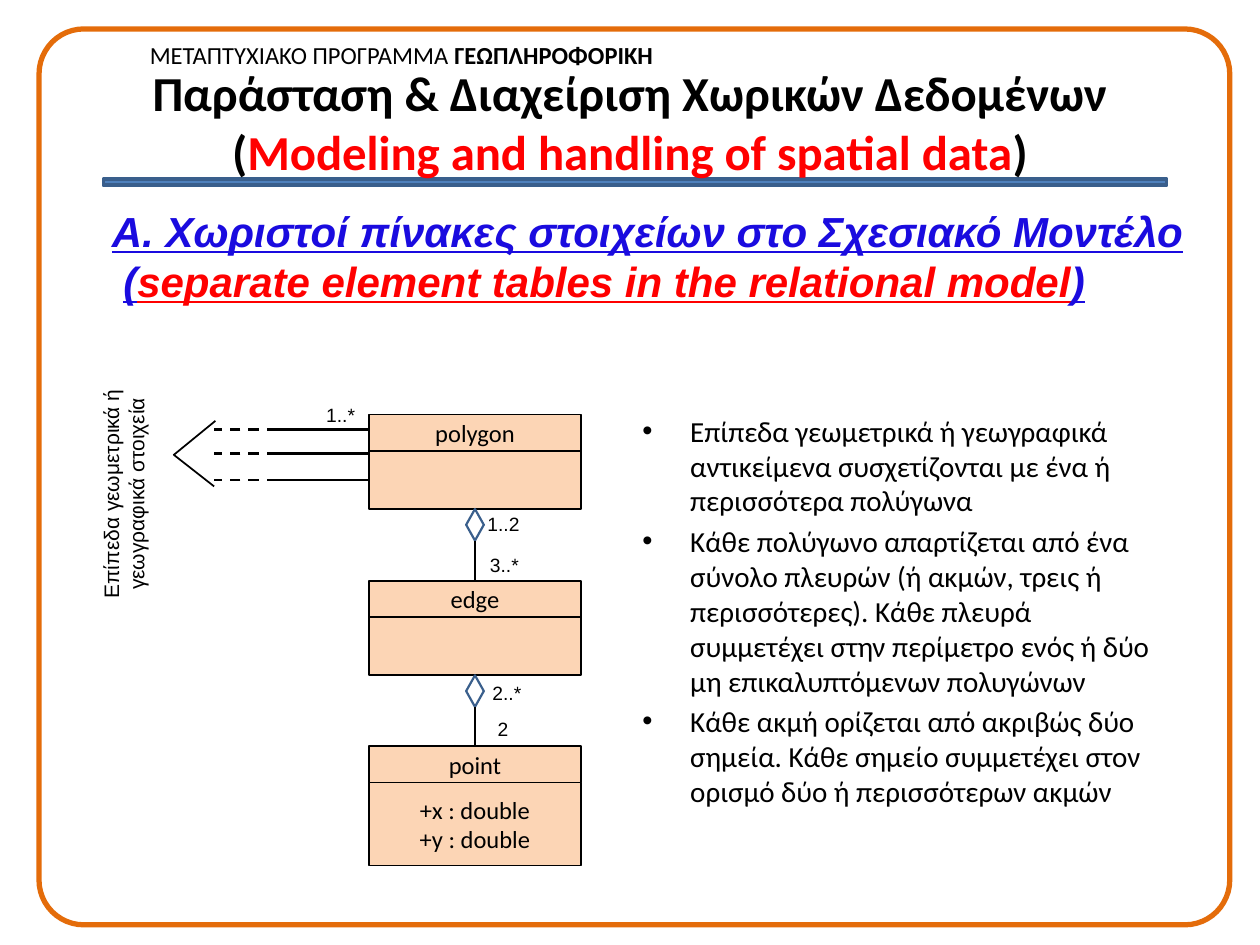
from dataclasses import dataclass

from lxml.etree import SubElement
from pptx import Presentation
from pptx.dml.color import RGBColor
from pptx.enum.dml import MSO_LINE
from pptx.enum.shapes import MSO_CONNECTOR, MSO_SHAPE
from pptx.enum.text import MSO_ANCHOR, MSO_AUTO_SIZE, PP_ALIGN
from pptx.oxml.ns import qn
from pptx.util import Emu, Pt

PX = 9144


@dataclass(frozen=True)
class Theme:
    """Colours, fonts and type sizes of the slide."""
    ink: str = "000000"
    red: str = "FF0000"
    heading_blue: str = "1A0BDF"
    rule_blue: str = "4F81BD"
    outline_blue: str = "3A5F8C"
    frame_orange: str = "E46C0A"
    class_peach: str = "FCD5B5"
    body_font: str = "Calibri"
    label_font: str = "Arial"
    title_size: float = 27.9
    heading_size: float = 24
    bullet_size: float = 16.6
    class_size: float = 14
    side_size: float = 12
    label_size: float = 11


THEME = Theme()


def px(length):
    """Turn whole pixels into EMU."""
    return Emu(length * PX)


def rgb(color):
    """Turn a hex string into a colour."""
    return RGBColor.from_string(color)


def set_line(line, color, width, dash=None):
    """Format an outline or a connector line."""
    line.color.rgb = rgb(color)
    line.width = Pt(width)
    if dash:
        line.dash_style = dash


def style_shape(shape, fill, color, width):
    """Give a shape its fill and outline without a shadow."""
    shape.shadow.inherit = False
    if fill:
        shape.fill.solid()
        shape.fill.fore_color.rgb = rgb(fill)
    else:
        shape.fill.background()
    set_line(shape.line, color, width)


def add_block(slide, kind, box, fill=None, color=THEME.ink, width=1):
    """Add a preset shape."""
    block = slide.shapes.add_shape(kind, *map(px, box))
    style_shape(block, fill, color, width)
    return block


def add_line(slide, start, end, width, dash=None):
    """Add a straight connector."""
    line = slide.shapes.add_connector(MSO_CONNECTOR.STRAIGHT, *map(px, start + end))
    set_line(line.line, THEME.ink, width, dash)
    SubElement(line._element.spPr, qn("a:effectLst"))
    return line


def set_bullet(paragraph, indent):
    """Give a paragraph a hanging bullet."""
    properties = paragraph._p.get_or_add_pPr()
    properties.set("marL", str(px(indent)))
    properties.set("indent", str(-px(indent)))
    SubElement(properties, qn("a:buFont"), typeface="Arial")
    SubElement(properties, qn("a:buChar"), char="•")


def write(shape, paragraphs, size, font=THEME.body_font, color=THEME.ink, bold=False,
          italic=False, underline=False, align=PP_ALIGN.LEFT, anchor=MSO_ANCHOR.TOP,
          wrap=True, bullet=0, gap=0, last_indent=0):
    """Write paragraphs, each a list of (text, format changes) runs."""
    frame = shape.text_frame
    frame.word_wrap = wrap
    frame.vertical_anchor = anchor
    if not wrap:
        frame.auto_size = MSO_AUTO_SIZE.SHAPE_TO_FIT_TEXT
    for index, runs in enumerate(paragraphs):
        paragraph = frame.add_paragraph() if index else frame.paragraphs[0]
        paragraph.alignment = align
        if index and gap:
            paragraph.space_before = Pt(gap)
        if bullet:
            set_bullet(paragraph, bullet)
        for text, changes in runs:
            if text == "\n":
                paragraph.add_line_break()
                continue
            run = paragraph.add_run()
            run.text = text
            run.font.name = font
            run.font.size = Pt(size)
            run.font.bold = changes.get("bold", bold)
            run.font.italic = italic
            run.font.underline = underline
            run.font.color.rgb = rgb(changes.get("color", color))
    if last_indent:
        paragraph._p.get_or_add_pPr().set("marL", str(px(last_indent)))


def add_text(slide, box, paragraphs, **style):
    """Add a text box."""
    text_box = slide.shapes.add_textbox(*map(px, box))
    write(text_box, paragraphs, **style)
    return text_box


def add_class(slide, name, top, body_height, attributes=()):
    """Add a class box and return its header and body."""
    left, width, header_height = 293, 168, 29
    style = dict(size=THEME.class_size, align=PP_ALIGN.CENTER, anchor=MSO_ANCHOR.MIDDLE)
    header = add_block(slide, MSO_SHAPE.RECTANGLE, (left, top, width, header_height),
                       THEME.class_peach)
    write(header, [[(name, {})]], **style)
    body = add_block(slide, MSO_SHAPE.RECTANGLE,
                     (left, top + header_height, width, body_height), THEME.class_peach)
    if attributes:
        write(body, [[(attribute, {})] for attribute in attributes], **style)
    return header, body


def add_aggregation(slide, whole_bottom, part_header):
    """Join a whole to its part by a diamond and a line."""
    center, width, height = 377, 14, 25
    diamond = add_block(slide, MSO_SHAPE.FLOWCHART_DECISION,
                        (center - width // 2, whole_bottom, width, height),
                        color=THEME.outline_blue, width=1.25)
    end = (center, whole_bottom + height)
    link = add_line(slide, end, end, 1.25)
    link.begin_connect(diamond, 2)
    link.end_connect(part_header, 0)


def add_incoming(slide, polygon_body):
    """Draw the links from the geographic elements to the polygon."""
    for y in (341, 360, 381):
        solid = add_line(slide, (293, y), (220, y), 1.5)
        add_line(slide, (220, y), (170, y), 1.5, MSO_LINE.DASH)
    solid.begin_connect(polygon_body, 1)
    builder = slide.shapes.build_freeform(171, 334, scale=PX)
    builder.add_line_segments([(138, 361), (170, 386)], close=False)
    style_shape(builder.convert_to_shape(), None, THEME.ink, 1)


def add_diagram(slide):
    """Draw the class diagram with its multiplicities."""
    _, polygon_body = add_class(slide, "polygon", 329, 46)
    edge_header, _ = add_class(slide, "edge", 461, 46)
    point_header, _ = add_class(slide, "point", 592, 66, ("+x : double", "+y : double"))
    add_incoming(slide, polygon_body)
    add_aggregation(slide, 404, edge_header)
    add_aggregation(slide, 536, point_header)
    for multiplicity, left, top in (("1..*", 249, 315), ("1..2", 377, 402),
                                    ("3..*", 379, 434), ("2..*", 381, 536), ("2", 385, 564)):
        add_text(slide, (left, top, 58, 29), [[(multiplicity, {})]],
                 size=THEME.label_size, font=THEME.label_font)
    source = add_text(slide, (-1, 367, 198, 50),
                      [[("Επίπεδα γεωμετρικά ή γεωγραφικά στοιχεία", {})]],
                      size=THEME.side_size, font=THEME.label_font, align=PP_ALIGN.CENTER)
    source.rotation = 270


def add_header(slide):
    """Add the frame, programme name, title and heading."""
    add_text(slide, (109, 27, 428, 34),
             [[("ΜΕΤΑΠΤΥΧΙΑΚΟ ΠΡΟΓΡΑΜΜΑ ", {}), ("ΓΕΩΠΛΗΡΟΦΟΡΙΚΗ", {"bold": True})]],
             size=THEME.class_size, wrap=False)
    add_block(slide, MSO_SHAPE.RECTANGLE, (82, 142, 844, 5), THEME.rule_blue,
              THEME.outline_blue, 2)
    border = add_block(slide, MSO_SHAPE.ROUNDED_RECTANGLE, (31, 23, 945, 711),
                       color=THEME.frame_orange, width=3)
    border.adjustments[0] = 0.05
    red = {"color": THEME.red}
    add_text(slide, (50, 45, 900, 103),
             [[("Παράσταση & Διαχείριση Χωρικών Δεδομένων", {}), ("\n", {}), ("(", {}),
               ("Modeling and handling of spatial data", red), (")", {})]],
             size=THEME.title_size, bold=True, align=PP_ALIGN.CENTER, anchor=MSO_ANCHOR.MIDDLE)
    add_text(slide, (79, 158, 877, 91),
             [[("Α. Xωριστοί πίνακες στοιχείων στο Σχεσιακό Μοντέλο", {})],
              [("(", {}), ("separate element tables in the relational model", red), (")", {})]],
             size=THEME.heading_size, font=THEME.label_font, color=THEME.heading_blue,
             bold=True, italic=True, underline=True, wrap=False, last_indent=9)


def main():
    """Build and save the slide."""
    deck = Presentation()
    deck.slide_width, deck.slide_height = px(1000), px(750)
    slide = deck.slides.add_slide(deck.slide_layouts[6])
    add_header(slide)
    rules = (
        "Επίπεδα γεωμετρικά ή γεωγραφικά αντικείμενα συσχετίζονται με ένα ή "
        "περισσότερα πολύγωνα",
        "Κάθε πολύγωνο απαρτίζεται από ένα σύνολο πλευρών (ή ακμών, τρεις ή περισσότερες). "
        "Κάθε πλευρά συμμετέχει στην περίμετρο ενός ή δύο μη επικαλυπτόμενων πολυγώνων",
        "Κάθε ακμή ορίζεται από ακριβώς δύο σημεία. Κάθε σημείο συμμετέχει στον ορισμό δύο ή "
        "περισσότερων ακμών",
    )
    add_text(slide, (500, 323, 427, 367), [[(rule, {})] for rule in rules],
             size=THEME.bullet_size, bullet=38, gap=3.3)
    add_diagram(slide)
    deck.save("out.pptx")


if __name__ == "__main__":
    main()
